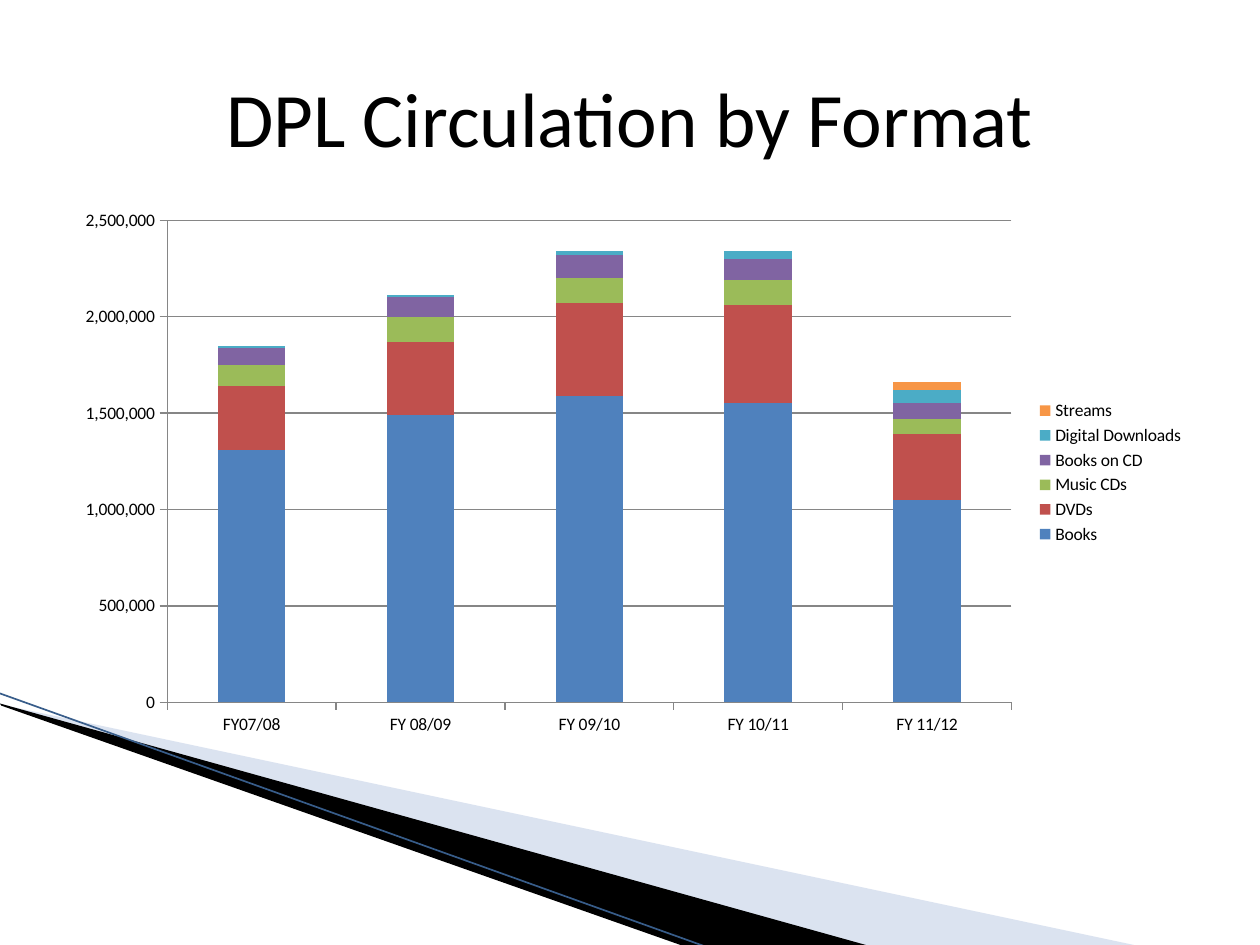
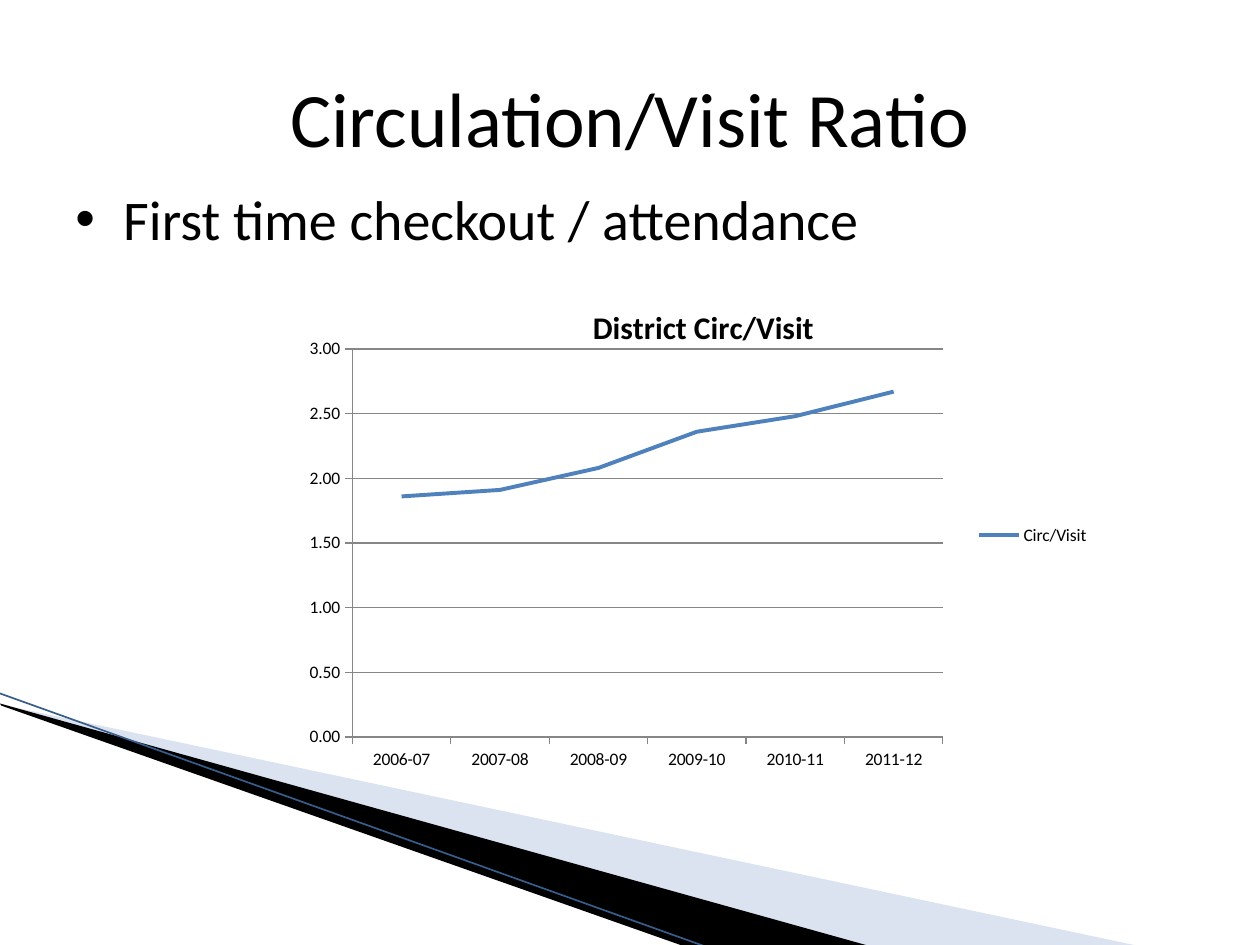
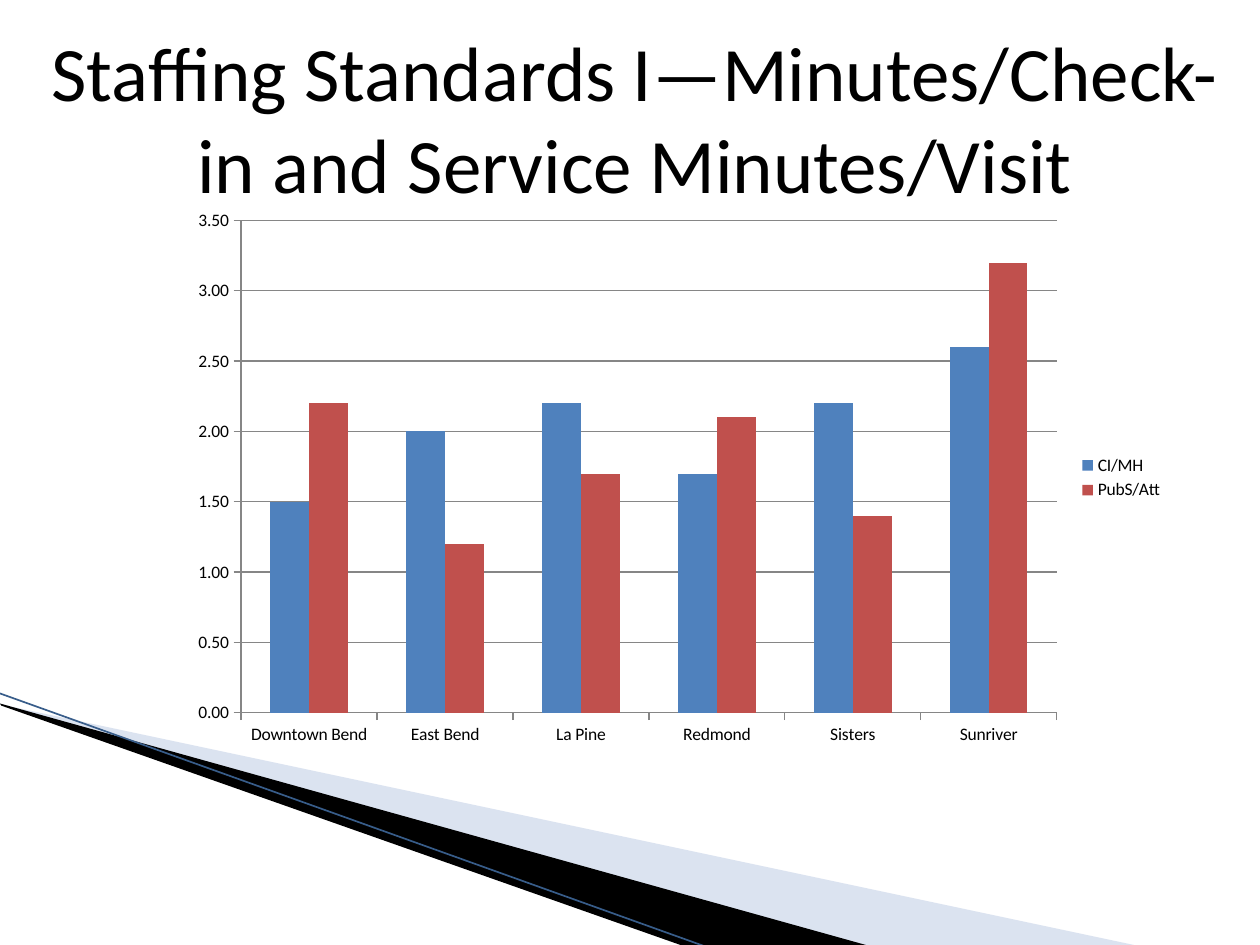
from dataclasses import dataclass
from typing import NamedTuple, Optional

from lxml.etree import SubElement
from pptx import Presentation
from pptx.chart.chart import Chart
from pptx.chart.data import CategoryChartData
from pptx.dml.color import RGBColor
from pptx.enum.chart import XL_CHART_TYPE as ChartType
from pptx.enum.chart import XL_LEGEND_POSITION as LegendPosition
from pptx.enum.chart import XL_MARKER_STYLE as MarkerStyle
from pptx.enum.chart import XL_TICK_MARK as TickMark
from pptx.enum.shapes import MSO_CONNECTOR as ConnectorType
from pptx.enum.text import MSO_ANCHOR as Anchor
from pptx.enum.text import PP_ALIGN as Align
from pptx.oxml.ns import qn
from pptx.slide import Slide
from pptx.util import Emu, Inches, Pt

SLIDE_WIDTH, SLIDE_HEIGHT = Inches(10), Inches(7.5)
COLUMNS, ROWS = 120, 90
FONT = "Calibri"
BLACK, PALE_BLUE, EDGE_BLUE, GRID_GREY = "000000", "A7B9DB", "385D8A", "868686"
BLUE, RED, GREEN, PURPLE, TEAL, ORANGE = (
    "4F81BD", "C0504D", "9BBB59", "8064A2", "4BACC6", "F79646")


class Area(NamedTuple):
    column: float
    row: float
    columns: float
    rows: float


class Wedge(NamedTuple):
    corners: list[tuple[float, float]]
    color: str
    opacity: int


class Series(NamedTuple):
    name: str
    color: str
    values: list[Optional[float]]


@dataclass
class ChartPlan:
    kind: ChartType
    area: Area
    categories: list[str]
    series: list[Series]
    number_format: str = "0.00"
    title: str = ""
    plot_shares: Optional[dict[str, float]] = None


@dataclass
class Page:
    title: str
    chart: ChartPlan
    bullet: str = ""
    title_area: Area = Area(6, 3.6, 108, 15)


BULLET_AREA = Area(6, 17, 108, 54)
WEDGES = [
    Wedge([(0, 67.08), (108, 90), (80.2, 90), (0, 67)], PALE_BLUE, 40),
    Wedge([(0, 67), (82.9, 90.12), (65.5, 90.24), (0.12, 67.2)], BLACK, 100),
]
EDGE = [(-0.12, 66), (67.44, 90.24)]

PAGES = [
    Page("DPL Circulation by Format", ChartPlan(
        ChartType.COLUMN_STACKED, Area(6, 19, 108, 52),
        ["FY07/08", "FY 08/09", "FY 09/10", "FY 10/11", "FY 11/12"],
        [
            Series("Books", BLUE, [1310000, 1490000, 1590000, 1550000, 1050000]),
            Series("DVDs", RED, [330000, 380000, 480000, 510000, 340000]),
            Series("Music CDs", GREEN, [110000, 130000, 130000, 130000, 80000]),
            Series("Books on CD", PURPLE, [90000, 100000, 120000, 110000, 80000]),
            Series("Digital Downloads", TEAL, [10000, 10000, 20000, 40000, 70000]),
            Series("Streams", ORANGE, [None, None, None, None, 40000]),
        ],
        number_format="#,##0")),
    Page("Circulation/Visit Ratio", ChartPlan(
        ChartType.LINE, Area(29, 27, 76, 48),
        ["2006-07", "2007-08", "2008-09", "2009-10", "2010-11", "2011-12"],
        [Series("Circ/Visit", BLUE, [1.86, 1.91, 2.08, 2.36, 2.48, 2.67])],
        title="District Circ/Visit",
        plot_shares={"x": 0.06, "y": 0.13, "w": 0.74, "h": 0.77}),
        bullet="First time checkout / attendance"),
    Page("Staffing Standards I—Minutes/Check-in and Service Minutes/Visit", ChartPlan(
        ChartType.COLUMN_CLUSTERED, Area(17, 19, 95, 53),
        ["Downtown Bend", "East Bend", "La Pine", "Redmond", "Sisters", "Sunriver"],
        [
            Series("CI/MH", BLUE, [1.5, 2, 2.2, 1.7, 2.2, 2.6]),
            Series("PubS/Att", RED, [2.2, 1.2, 1.7, 2.1, 1.4, 3.2]),
        ]),
        title_area=Area(3, 3.6, 115, 15)),
]


def rgb(color: str) -> RGBColor:
    return RGBColor.from_string(color)


def across(columns: float) -> Emu:
    return Emu(round(SLIDE_WIDTH * columns / COLUMNS))


def down(rows: float) -> Emu:
    return Emu(round(SLIDE_HEIGHT * rows / ROWS))


def place(area: Area) -> tuple[Emu, Emu, Emu, Emu]:
    return across(area.column), down(area.row), across(area.columns), down(area.rows)


def set_font(font, size: float, color: str = BLACK, bold: bool = False) -> None:
    font.name, font.size, font.bold = FONT, Pt(size), bold
    font.color.rgb = rgb(color)


def add_text(slide: Slide, text: str, area: Area, *, size: float,
             align: Align = Align.LEFT, anchor: Anchor = Anchor.TOP,
             bullet: str = "") -> None:
    frame = slide.shapes.add_textbox(*place(area)).text_frame
    frame.word_wrap = True
    frame.vertical_anchor = anchor
    para = frame.paragraphs[0]
    para.alignment = align
    if bullet:
        properties = para._p.get_or_add_pPr()
        indent = Inches(0.38)
        properties.set("marL", str(indent))
        properties.set("indent", str(-indent))
        SubElement(properties, qn("a:buFont"), typeface="Arial")
        SubElement(properties, qn("a:buChar"), char=bullet)
    span = para.add_run()
    span.text = text
    set_font(span.font, size)


def add_wedge(slide: Slide, wedge: Wedge) -> None:
    points = [(across(column), down(row)) for column, row in wedge.corners]
    builder = slide.shapes.build_freeform(*points[0])
    builder.add_line_segments(points[1:], close=True)
    shape = builder.convert_to_shape()
    shape.shadow.inherit = False
    shape.fill.solid()
    shape.fill.fore_color.rgb = rgb(wedge.color)
    shape.line.fill.background()
    if wedge.opacity < 100:
        for color in shape.fill._xPr.iter(qn("a:srgbClr")):
            SubElement(color, qn("a:alpha"), val=str(wedge.opacity * 1000))


def add_band(slide: Slide) -> None:
    for wedge in WEDGES:
        add_wedge(slide, wedge)
    ends = [length for column, row in EDGE for length in (across(column), down(row))]
    edge = slide.shapes.add_connector(ConnectorType.STRAIGHT, *ends)
    edge.line.color.rgb = rgb(EDGE_BLUE)
    edge.line.width = Pt(0.95)
    SubElement(edge._element.spPr, qn("a:effectLst"))


def set_plot_area(chart: Chart, shares: dict[str, float]) -> None:
    plot_area = chart.element.find(".//" + qn("c:plotArea"))
    for layout in plot_area.findall(qn("c:layout")):
        plot_area.remove(layout)
    layout = SubElement(plot_area, qn("c:layout"))
    plot_area.insert(0, layout)
    manual = SubElement(layout, qn("c:manualLayout"))
    settings = {"layoutTarget": "inner", "xMode": "edge", "yMode": "edge", **shares}
    for name, value in settings.items():
        SubElement(manual, qn(f"c:{name}"), val=str(value))


def format_axes(chart: Chart, number_format: str) -> None:
    for axis in (chart.category_axis, chart.value_axis):
        axis.major_tick_mark = TickMark.OUTSIDE
        axis.minor_tick_mark = TickMark.NONE
        axis.format.line.color.rgb = rgb(GRID_GREY)
        axis.format.line.width = Pt(0.75)
    values = chart.value_axis
    values.has_major_gridlines = True
    values.major_gridlines.format.line.color.rgb = rgb(GRID_GREY)
    values.major_gridlines.format.line.width = Pt(0.75)
    values.tick_labels.number_format = number_format
    values.tick_labels.number_format_is_linked = False


def format_series(chart: Chart, plan: ChartPlan) -> None:
    plot = chart.plots[0]
    plot.vary_by_categories = False
    is_line = plan.kind == ChartType.LINE
    if not is_line:
        plot.gap_width = 150
        plot.overlap = 100 if plan.kind == ChartType.COLUMN_STACKED else 0
    for drawn, series in zip(plot.series, plan.series):
        if is_line:
            drawn.smooth = False
            drawn.marker.style = MarkerStyle.NONE
            drawn.format.line.color.rgb = rgb(series.color)
            drawn.format.line.width = Pt(2.25)
        else:
            drawn.format.fill.solid()
            drawn.format.fill.fore_color.rgb = rgb(series.color)


def add_chart(slide: Slide, plan: ChartPlan) -> None:
    data = CategoryChartData(number_format=plan.number_format)
    data.categories = plan.categories
    for series in plan.series:
        data.add_series(series.name, series.values)
    chart = slide.shapes.add_chart(plan.kind, *place(plan.area), data).chart
    set_font(chart.font, 10)
    chart.has_legend = True
    chart.legend.position = LegendPosition.RIGHT
    chart.legend.include_in_layout = False
    chart.has_title = bool(plan.title)
    if plan.title:
        span = chart.chart_title.text_frame.paragraphs[0].add_run()
        span.text = plan.title
        set_font(span.font, 18, bold=True)
    format_axes(chart, plan.number_format)
    format_series(chart, plan)
    if plan.plot_shares:
        set_plot_area(chart, plan.plot_shares)


def main() -> None:
    deck = Presentation()
    deck.slide_width, deck.slide_height = SLIDE_WIDTH, SLIDE_HEIGHT
    for page in PAGES:
        slide = deck.slides.add_slide(deck.slide_layouts[6])
        add_band(slide)
        add_text(slide, page.title, page.title_area, size=44,
                 align=Align.CENTER, anchor=Anchor.MIDDLE)
        if page.bullet:
            add_text(slide, page.bullet, BULLET_AREA, size=32, bullet="•")
        add_chart(slide, page.chart)
    deck.save("out.pptx")


if __name__ == "__main__":
    main()
